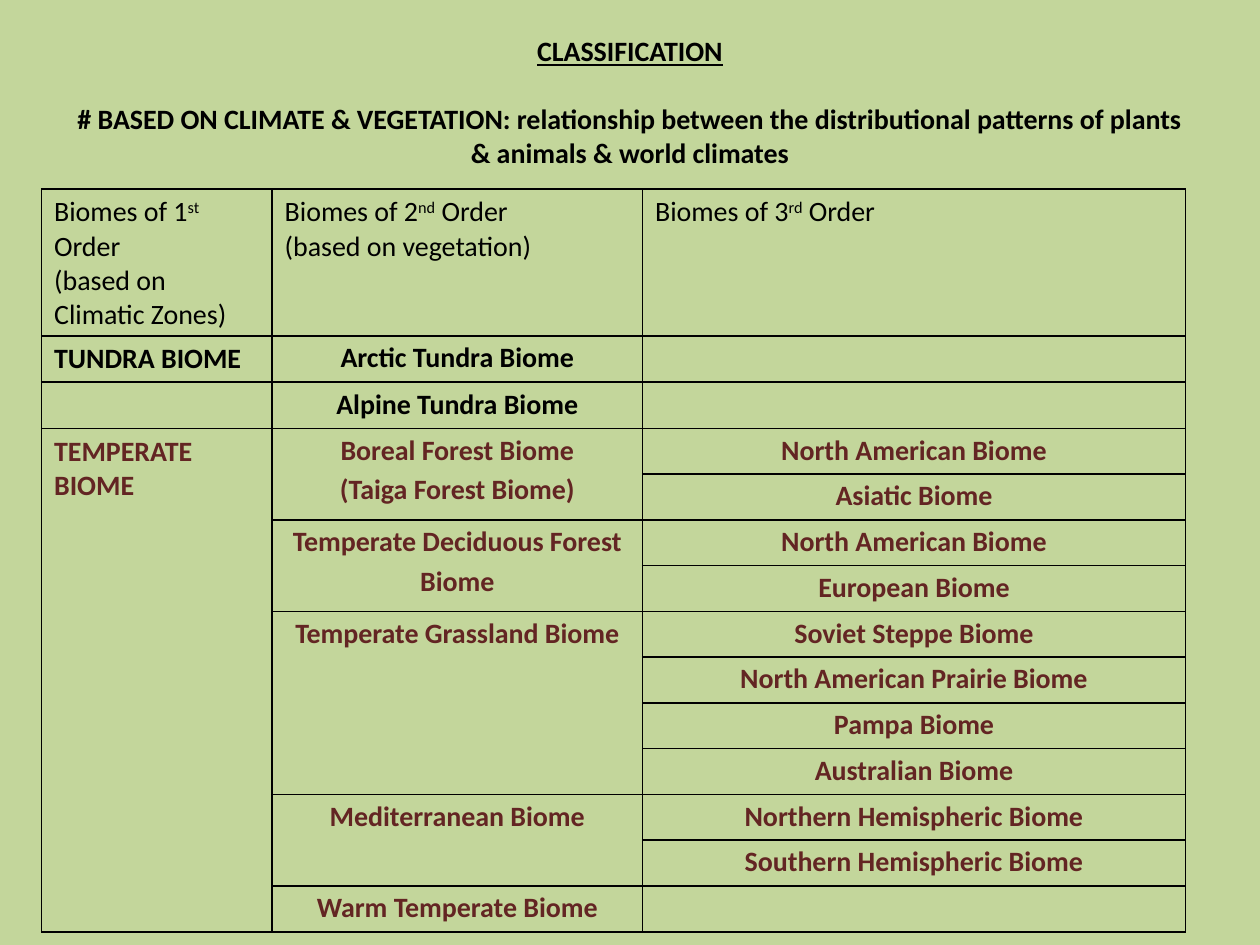
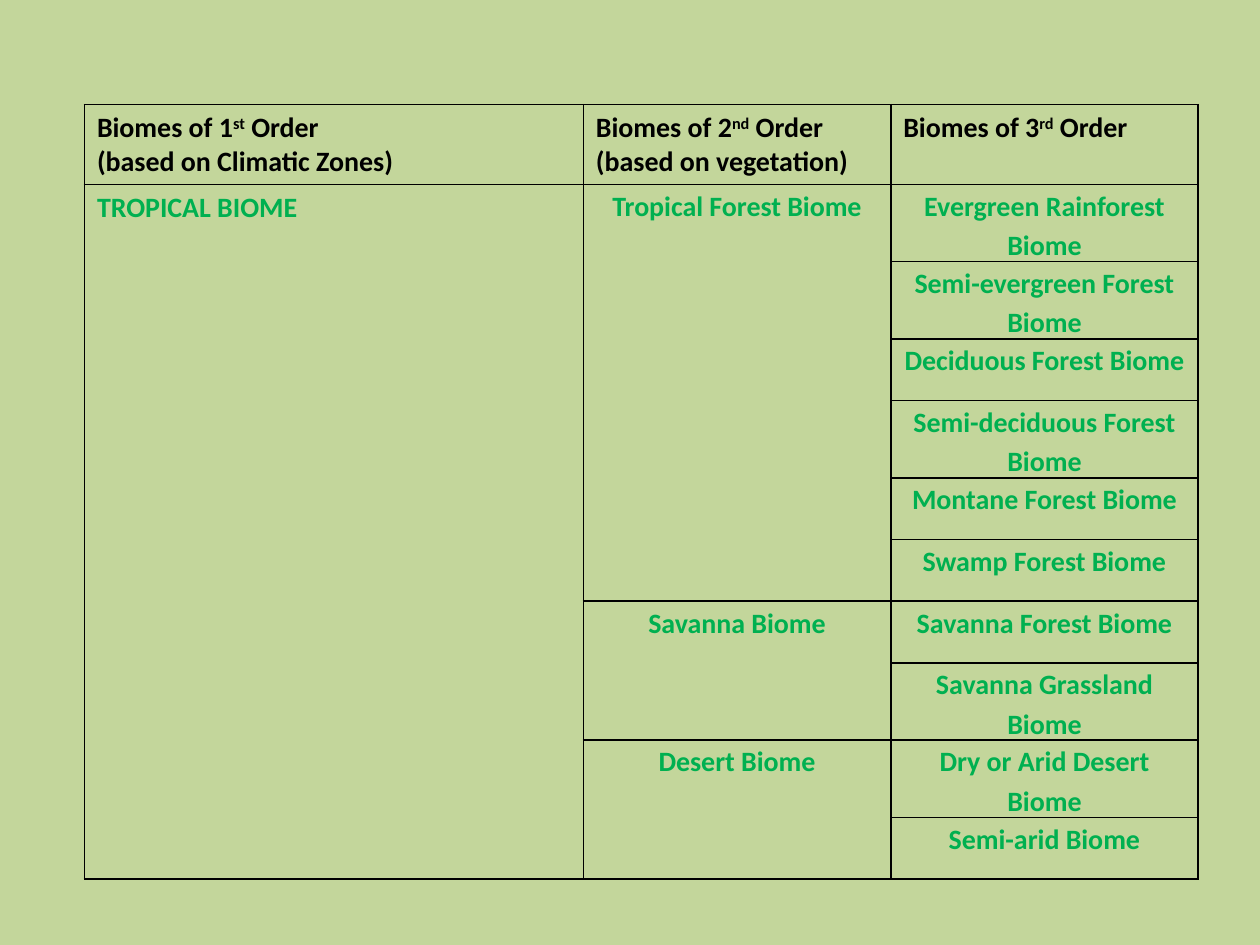
from dataclasses import dataclass
from typing import Any

import pptx
import pptx.dml.color
import pptx.enum.text
import pptx.oxml
import pptx.oxml.ns
import pptx.util
from pptx.util import Inches

ALIGN = pptx.enum.text.PP_ALIGN
ANCHOR = pptx.enum.text.MSO_ANCHOR


@dataclass(frozen=True)
class Theme:
    background: str = "C3D69B"
    ink: str = "000000"
    temperate: str = "632523"
    tropical: str = "00B050"
    font: str = "Calibri"
    size: int = 16
    border: float = 1
    superscript: int = 30000


THEME = Theme()


@dataclass(frozen=True)
class SecondOrder:
    name: str
    third: tuple[str, ...] = ("",)


@dataclass(frozen=True)
class FirstOrder:
    name: str
    color: str
    second: tuple[SecondOrder, ...]


@dataclass(frozen=True)
class BiomeTable:
    left: float
    top: float
    columns: tuple[float, ...]
    header_height: float
    body_height: float
    header_bold: bool
    biomes: tuple[FirstOrder, ...]


HEADERS = (("1", "st", "(based on Climatic Zones)"),
           ("2", "nd", "(based on vegetation)"),
           ("3", "rd", ""))

INNER_CELL = {"margin_left": Inches(0.07), "margin_right": Inches(0.07),
              "margin_top": 0, "margin_bottom": 0}
INNER_PARAGRAPH = {"alignment": ALIGN.CENTER, "line_spacing": 1.15}

TEMPERATE_TABLE = BiomeTable(
    0.33, 1.5, (1.83, 2.94, 4.31), 1.01, 4.72, False,
    (
        FirstOrder("TUNDRA BIOME", THEME.ink, (SecondOrder("Arctic Tundra Biome"),)),
        FirstOrder("", THEME.ink, (SecondOrder("Alpine Tundra Biome"),)),
        FirstOrder("TEMPERATE BIOME", THEME.temperate, (
            SecondOrder("Boreal Forest Biome\n(Taiga Forest Biome)",
                        ("North American Biome", "Asiatic Biome")),
            SecondOrder("Temperate Deciduous Forest Biome",
                        ("North American Biome", "European Biome")),
            SecondOrder("Temperate Grassland Biome",
                        ("Soviet Steppe Biome", "North American Prairie Biome",
                         "Pampa Biome", "Australian Biome")),
            SecondOrder("Mediterranean Biome",
                        ("Northern Hemispheric Biome", "Southern Hemispheric Biome")),
            SecondOrder("Warm Temperate Biome"),
        )),
    ))

TROPICAL_TABLE = BiomeTable(
    0.67, 0.83, (3.96, 2.44, 2.44), 0.49, 4.9, True,
    (
        FirstOrder("TROPICAL BIOME", THEME.tropical, (
            SecondOrder("Tropical Forest Biome",
                        ("Evergreen Rainforest Biome", "Semi-evergreen Forest Biome",
                         "Deciduous Forest Biome", "Semi-deciduous Forest Biome",
                         "Montane Forest Biome", "Swamp Forest Biome")),
            SecondOrder("Savanna Biome",
                        ("Savanna Forest Biome", "Savanna Grassland Biome")),
            SecondOrder("Desert Biome",
                        ("Dry or Arid Desert Biome", "Semi-arid Biome")),
        )),
    ))


def apply(target: Any, values: dict[str, Any]) -> None:
    for name, value in values.items():
        setattr(target, name, value)


def add_run(p: Any, text: str, color: str = THEME.ink, bold: bool = True,
            underline: bool = False) -> Any:
    r = p.add_run()
    r.text = text
    apply(r.font, {"name": THEME.font, "size": pptx.util.Pt(THEME.size),
                   "bold": bold, "underline": underline})
    r.font.color.rgb = pptx.dml.color.RGBColor.from_string(color)
    return r


def add_slide(prs: Any) -> Any:
    s = prs.slides.add_slide(prs.slide_layouts[6])
    fill = s.background.fill
    fill.solid()
    fill.fore_color.rgb = pptx.dml.color.RGBColor.from_string(THEME.background)
    return s


def add_title(s: Any, heading: str, basis: str) -> None:
    sp = s.shapes.add_textbox(Inches(0.5), Inches(0.3), Inches(9), Inches(1.25))
    tf = sp.text_frame
    apply(tf, {"word_wrap": True, "vertical_anchor": ANCHOR.MIDDLE,
               "margin_top": 0, "margin_bottom": Inches(0.24)})
    p = tf.paragraphs[0]
    apply(p, {"alignment": ALIGN.CENTER, "space_after": pptx.util.Pt(19.5)})
    add_run(p, heading, underline=True)
    p = tf.add_paragraph()
    p.alignment = ALIGN.CENTER
    add_run(p, basis)


def style_cell(cell: Any) -> None:
    """Clear the fill, rule all four sides and size the empty line."""
    cell.fill.background()
    tc_pr = cell._tc.get_or_add_tcPr()
    for i, side in enumerate(("lnL", "lnR", "lnT", "lnB")):
        tc_pr.insert(i, pptx.oxml.parse_xml(
            f'<a:{side} {pptx.oxml.ns.nsdecls("a")} w="{pptx.util.Pt(THEME.border)}">'
            f'<a:solidFill><a:srgbClr val="{THEME.ink}"/></a:solidFill></a:{side}>'))
    end = cell.text_frame.paragraphs[0]._p.get_or_add_endParaRPr()
    end.set("sz", str(THEME.size * 100))


def fill_header(cell: Any, number: str, suffix: str, basis: str, bold: bool) -> None:
    p = cell.text_frame.paragraphs[0]
    add_run(p, f"Biomes of {number}", bold=bold)
    r = add_run(p, suffix, bold=bold)
    r._r.get_or_add_rPr().set("baseline", str(THEME.superscript))
    add_run(p, " Order", bold=bold)
    if basis:
        add_run(cell.text_frame.add_paragraph(), basis, bold=bold)


def fill_inner(cell: Any, text: str, color: str) -> None:
    if not text:
        return
    apply(cell, INNER_CELL)
    for i, line in enumerate(text.split("\n")):
        tf = cell.text_frame
        p = tf.add_paragraph() if i else tf.paragraphs[0]
        apply(p, INNER_PARAGRAPH)
        add_run(p, line, color)


def merge_down(table: Any, column: int, first: int, last: int) -> None:
    if last > first:
        table.cell(first, column).merge(table.cell(last, column))


def add_biome_table(s: Any, data: BiomeTable) -> None:
    body_rows = sum(len(b.third) for a in data.biomes for b in a.second)
    frame = s.shapes.add_table(
        body_rows + 1, len(data.columns), Inches(data.left), Inches(data.top),
        Inches(sum(data.columns)), Inches(data.header_height + data.body_height))
    table = frame.table
    apply(table, {"first_row": False, "horz_banding": False})
    for column, width in zip(table.columns, data.columns):
        column.width = Inches(width)
    for i, row in enumerate(table.rows):
        row.height = Inches(data.body_height / body_rows if i else data.header_height)
    for cell in table.iter_cells():
        style_cell(cell)
    for i, header in enumerate(HEADERS):
        fill_header(table.cell(0, i), *header, data.header_bold)

    row = 1
    for first in data.biomes:
        first_row = row
        if first.name:
            p = table.cell(row, 0).text_frame.paragraphs[0]
            add_run(p, first.name, first.color)
        for second in first.second:
            second_row = row
            fill_inner(table.cell(row, 1), second.name, first.color)
            for third in second.third:
                fill_inner(table.cell(row, 2), third, first.color)
                row += 1
            merge_down(table, 1, second_row, row - 1)
        merge_down(table, 0, first_row, row - 1)


def main() -> None:
    prs = pptx.Presentation()
    apply(prs, {"slide_width": Inches(10), "slide_height": Inches(7.5)})
    s = add_slide(prs)
    add_title(s, "CLASSIFICATION",
              "# BASED ON CLIMATE & VEGETATION: relationship between the "
              "distributional patterns of plants & animals & world climates")
    add_biome_table(s, TEMPERATE_TABLE)
    add_biome_table(add_slide(prs), TROPICAL_TABLE)
    prs.save("out.pptx")


if __name__ == "__main__":
    main()
